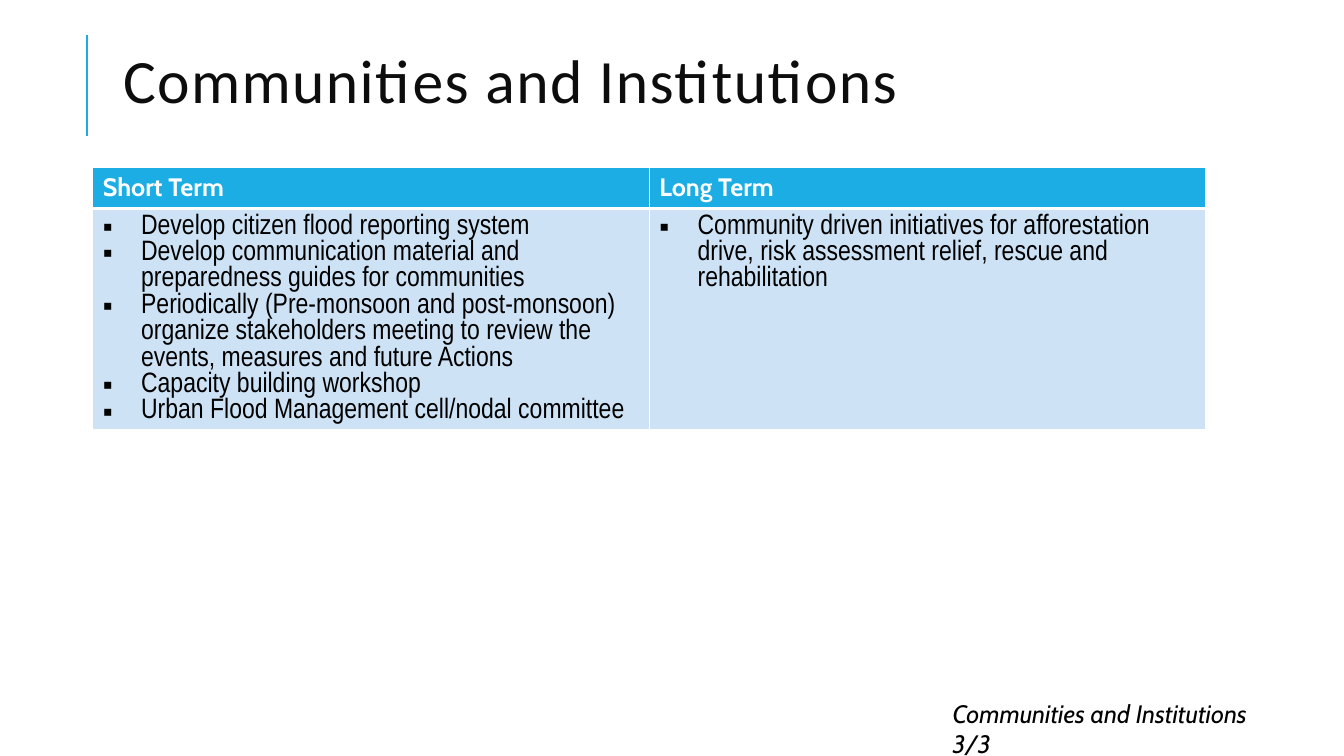
from pptx import Presentation
from pptx.dml.color import RGBColor
from pptx.enum.shapes import MSO_CONNECTOR
from pptx.enum.text import MSO_ANCHOR, PP_ALIGN
from pptx.oxml import parse_xml
from pptx.oxml.ns import nsdecls
from pptx.util import Inches, Pt

BLUE, PALE, BLACK, WHITE = "1CADE4", "CDE3F5", "000000", "FFFFFF"
INDENT = Inches(0.38)


def rgb(color):
    return RGBColor.from_string(color)


def write(para, text, font="Cabin", size=18, color=BLACK, bold=False,
          italic=False, bullet=None):
    run = para.add_run()
    run.text = text
    run.font.name, run.font.size = font, Pt(size)
    run.font.bold, run.font.italic = bold, italic
    run.font.color.rgb = rgb(color)
    if bullet:
        props = para._p.get_or_add_pPr()
        props.set("marL", str(INDENT))
        props.set("indent", str(-INDENT))
        props.append(parse_xml(f'<a:buFont {nsdecls("a")} typeface="Arial"/>'))
        props.append(parse_xml(f'<a:buChar {nsdecls("a")} char="{bullet}"/>'))
    return run


prs = Presentation()
prs.slide_width, prs.slide_height = Inches(13.33), Inches(7.5)
slide = prs.slides.add_slide(prs.slide_layouts[5])

# Title with its accent line
title = slide.shapes.title
title.left, title.top = Inches(1.12), Inches(0.35)
title.width, title.height = Inches(11.8), Inches(1)
title.text_frame.word_wrap = True
title.text_frame.vertical_anchor = MSO_ANCHOR.MIDDLE
para = title.text_frame.paragraphs[0]
para.alignment, para.line_spacing = PP_ALIGN.LEFT, 0.8
run = write(para, "Communities and Institutions", font="Calibri", size=44, color="0D0D0D")
run.font._element.set("spc", "100")

accent = slide.shapes.add_connector(
    MSO_CONNECTOR.STRAIGHT, Inches(0.86), Inches(1.35), Inches(0.86), Inches(0.35))
accent.line.color.rgb, accent.line.width = rgb(BLUE), Pt(1.5)
accent._element.spPr.append(parse_xml(f'<a:effectLst {nsdecls("a")}/>'))

# Table of actions by term
terms = {
    "Short Term": [
        "Develop citizen flood reporting system",
        "Develop communication material and preparedness guides for communities",
        "Periodically (Pre-monsoon and post-monsoon) organize stakeholders "
        "meeting to review the events, measures and future Actions",
        "Capacity building workshop",
        "Urban Flood Management cell/nodal committee",
    ],
    "Long Term": [
        "Community driven initiatives for afforestation drive, "
        "risk assessment relief, rescue and rehabilitation",
    ],
}
table = slide.shapes.add_table(
    2, len(terms), Inches(0.92), Inches(1.66), Inches(11.04), Inches(2.59)).table
table.rows[0].height, table.rows[1].height = Inches(0.41), Inches(2.18)

for col, (term, actions) in enumerate(terms.items()):
    head, body = table.cell(0, col), table.cell(1, col)
    write(head.text_frame.paragraphs[0], term, color=WHITE, bold=True)
    for i, action in enumerate(actions):
        frame = body.text_frame
        para = frame.add_paragraph() if i else frame.paragraphs[0]
        write(para, action, font="Arial Narrow", size=20, bullet="▪")
    for cell, fill, thick in ((head, BLUE, "B"), (body, PALE, "T")):
        props = cell._tc.get_or_add_tcPr()
        for side in "LRTB":
            width = Pt(3 if side == thick else 1)
            props.append(parse_xml(
                f'<a:ln{side} {nsdecls("a")} w="{width}"><a:solidFill>'
                f'<a:srgbClr val="{WHITE}"/></a:solidFill></a:ln{side}>'))
        cell.fill.solid()
        cell.fill.fore_color.rgb = rgb(fill)

# Section counter
footer = slide.shapes.add_textbox(Inches(9.35), Inches(6.88), Inches(3.43), Inches(0.4))
footer.text_frame.word_wrap = True
write(footer.text_frame.paragraphs[0], "Communities and Institutions 3/3", italic=True)

prs.save("out.pptx")
